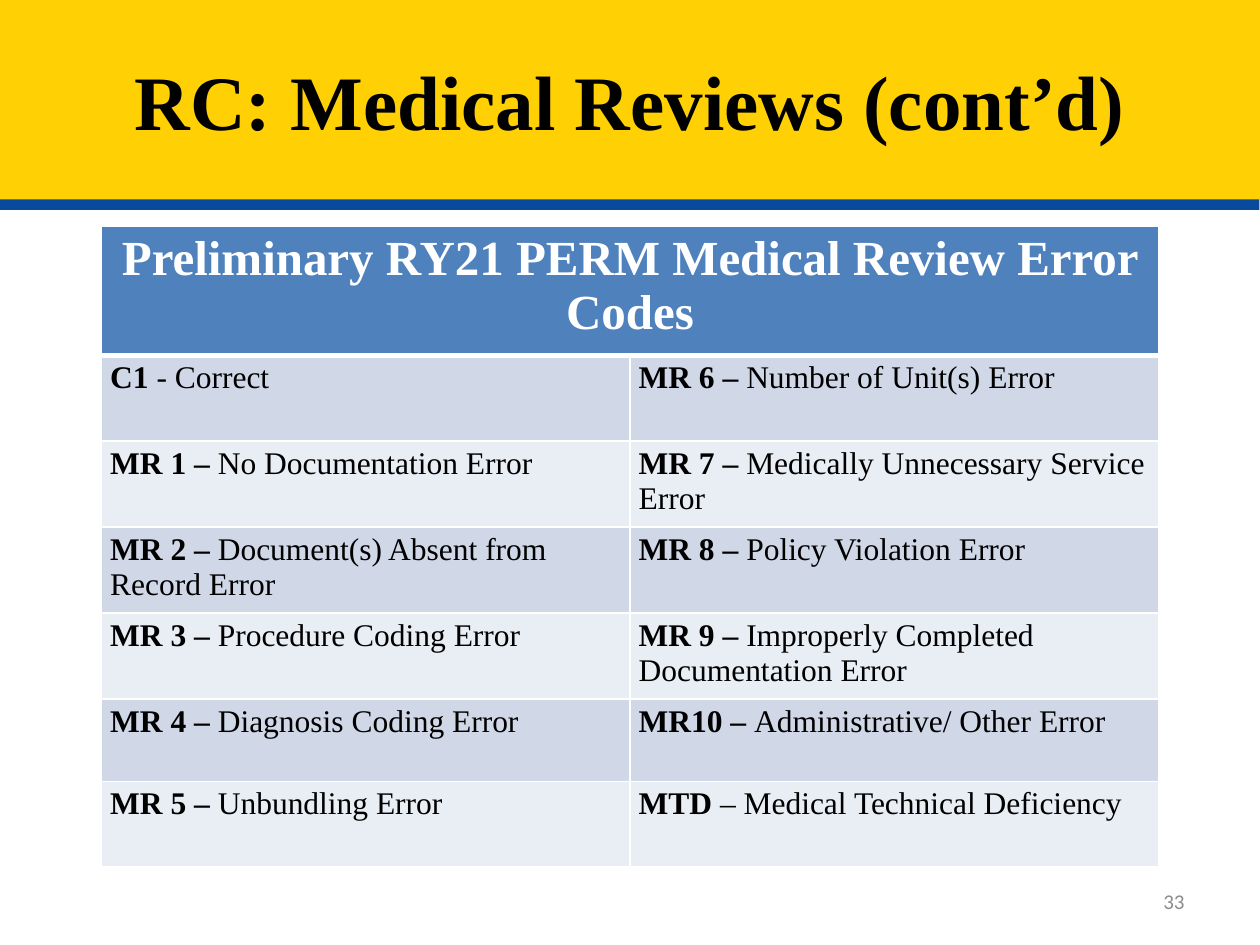
from dataclasses import dataclass

from pptx import Presentation
from pptx.dml.color import RGBColor as Color
from pptx.enum.text import MSO_ANCHOR as Anchor, PP_ALIGN as Align
from pptx.oxml import parse_xml
from pptx.oxml.ns import nsdecls
from pptx.util import Pt


@dataclass(frozen=True)
class Theme:
    serif: str = "Times New Roman"
    sans: str = "Calibri"
    yellow: str = "FFD004"
    blue: str = "084A9C"
    header: str = "4F81BD"
    bands: tuple = ("D0D8E8", "E9EDF4")
    white: str = "FFFFFF"
    black: str = "000000"
    gray: str = "8C8C8C"
    title_size: int = 44
    header_size: int = 28
    body_size: int = 18
    number_size: int = 12


THEME = Theme()

TITLE = "RC: Medical Reviews (cont’d)"
TABLE_HEADING = "Preliminary RY21 PERM Medical Review Error Codes"
SLIDE_NUMBER = "33"
# Each row holds two (bold code, description) pairs
ERROR_CODES = [
    [("C1", " - Correct"), ("MR 6 – ", "Number of Unit(s) Error")],
    [("MR 1 – ", "No Documentation Error"),
     ("MR 7 – ", "Medically Unnecessary Service Error")],
    [("MR 2 – ", "Document(s) Absent from Record Error"),
     ("MR 8 – ", "Policy Violation Error")],
    [("MR 3 – ", "Procedure Coding Error"),
     ("MR 9 – ", "Improperly Completed Documentation Error")],
    [("MR 4 – ", "Diagnosis Coding Error"),
     ("MR10 – ", "Administrative/ Other Error")],
    [("MR 5 – ", "Unbundling Error"),
     ("MTD ", "– Medical Technical Deficiency")],
]
ROW_HEIGHTS = [73.5, 49, 49, 49, 49, 47, 49]


def set_values(target, values):
    for name, value in values.items():
        setattr(target, name, value)


def add_run(paragraph, text, size, color, bold=False, font=THEME.serif):
    run = paragraph.add_run()
    run.text = text
    set_values(run.font, {"name": font, "size": Pt(size), "bold": bold})
    run.font.color.rgb = Color.from_string(color)


def fill_solid(target, color):
    target.fill.solid()
    target.fill.fore_color.rgb = Color.from_string(color)


def add_title(slide):
    title = slide.shapes.title
    set_values(title, {"left": Pt(0), "top": Pt(0),
                       "width": Pt(720), "height": Pt(114)})
    fill_solid(title, THEME.yellow)
    title.text_frame.vertical_anchor = Anchor.MIDDLE
    paragraph = title.text_frame.paragraphs[0]
    paragraph.alignment = Align.CENTER
    add_run(paragraph, TITLE, THEME.title_size, THEME.black, bold=True)
    # The hard-edged shadow forms the blue rule under the banner
    title._element.spPr.append(parse_xml(
        f'<a:effectLst {nsdecls("a")}>'
        f'<a:outerShdw blurRad="0" dist="{Pt(6)}" dir="{94 * 60000}" '
        'algn="ctr" rotWithShape="0">'
        f'<a:srgbClr val="{THEME.blue}"/></a:outerShdw></a:effectLst>'))


def add_slide_number(slide):
    box = slide.shapes.add_textbox(Pt(516), Pt(500.5), Pt(168), Pt(28.75))
    set_values(box.text_frame, {"word_wrap": True,
                                "vertical_anchor": Anchor.MIDDLE})
    paragraph = box.text_frame.paragraphs[0]
    paragraph.alignment = Align.RIGHT
    add_run(paragraph, SLIDE_NUMBER, THEME.number_size, THEME.gray,
            font=THEME.sans)


def set_borders(cell, bottom=1, top=1):
    properties = cell._tc.get_or_add_tcPr()
    widths = {"lnL": 1, "lnR": 1, "lnT": top, "lnB": bottom}
    for position, (tag, width) in enumerate(widths.items()):
        properties.insert(position, parse_xml(
            f'<a:{tag} {nsdecls("a")} w="{Pt(width)}"><a:solidFill>'
            f'<a:srgbClr val="{THEME.white}"/></a:solidFill></a:{tag}>'))


def format_cell(cell, color, **borders):
    set_values(cell, {"margin_left": Pt(5), "margin_right": Pt(5),
                      "margin_top": Pt(3), "margin_bottom": Pt(3)})
    fill_solid(cell, color)
    set_borders(cell, **borders)


def add_code_table(slide):
    frame = slide.shapes.add_table(len(ROW_HEIGHTS), 2, Pt(58), Pt(129.5),
                                   Pt(604), Pt(sum(ROW_HEIGHTS)))
    table = frame.table
    for row, height in zip(table.rows, ROW_HEIGHTS):
        row.height = Pt(height)

    # Heading across both columns
    heading = table.cell(0, 0)
    heading.merge(table.cell(0, 1))
    for column in range(2):
        format_cell(table.cell(0, column), THEME.header, bottom=3)
    paragraph = heading.text_frame.paragraphs[0]
    paragraph.alignment = Align.CENTER
    add_run(paragraph, TABLE_HEADING, THEME.header_size, THEME.white, bold=True)

    # Banded rows of error codes
    for row, pairs in enumerate(ERROR_CODES, start=1):
        for column, (code, description) in enumerate(pairs):
            cell = table.cell(row, column)
            format_cell(cell, THEME.bands[(row - 1) % 2],
                        top=3 if row == 1 else 1)
            paragraph = cell.text_frame.paragraphs[0]
            add_run(paragraph, code, THEME.body_size, THEME.black, bold=True)
            add_run(paragraph, description, THEME.body_size, THEME.black)


def main():
    presentation = Presentation()
    set_values(presentation, {"slide_width": Pt(720), "slide_height": Pt(540)})
    slide = presentation.slides.add_slide(presentation.slide_layouts[5])
    add_title(slide)
    add_slide_number(slide)
    add_code_table(slide)
    presentation.save("out.pptx")


if __name__ == "__main__":
    main()
